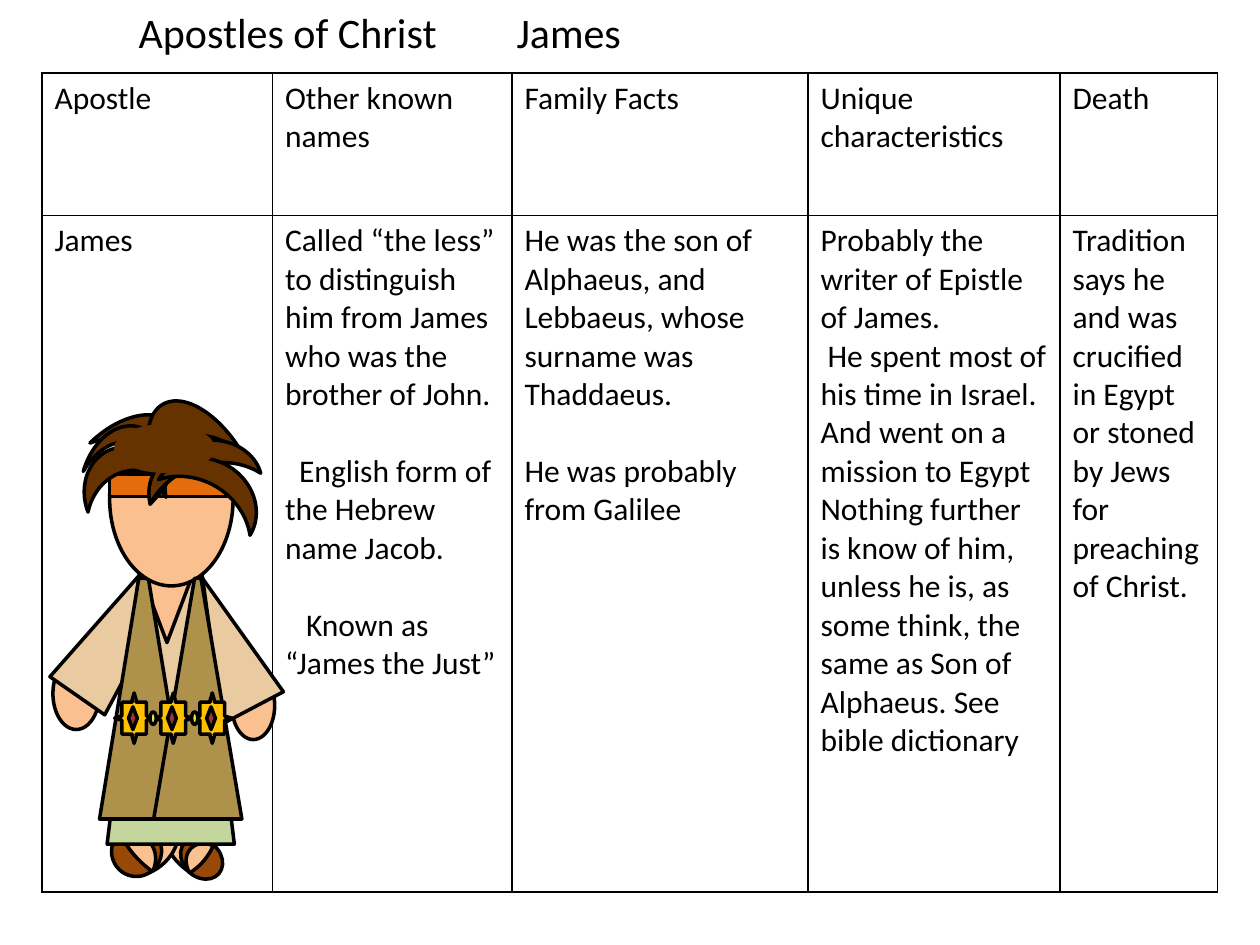
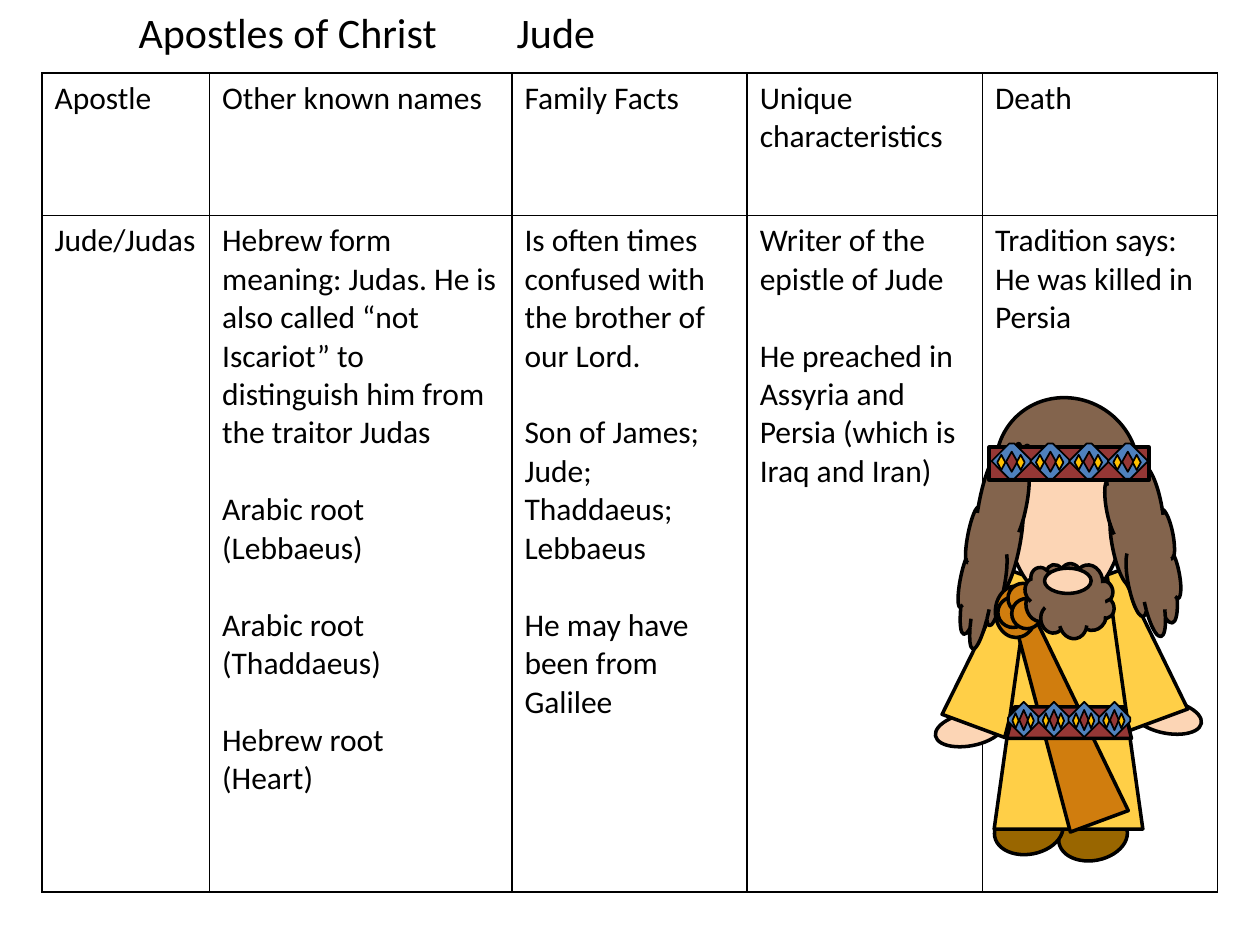
import collections
import dataclasses

import lxml.etree
import pptx
import pptx.dml.color
import pptx.enum.shapes
import pptx.enum.text
import pptx.oxml.ns
import pptx.util

MSO = pptx.enum.shapes.MSO_SHAPE
Para = collections.namedtuple("Para", "text gap indent", defaults=(0, 0))


@dataclasses.dataclass(frozen=True)
class Theme:
    font: str = "Calibri"
    title_size: int = 24
    body_size: int = 18
    line_height: float = 1.22
    columns: int = 100
    rows: int = 75
    ink: str = "000000"
    peach: str = "FAC090"
    pale_peach: str = "FCD5B5"
    linen: str = "EACAA0"
    olive: str = "AE924C"
    green: str = "C3D69B"
    orange: str = "E46C0A"
    dark_hair: str = "663300"
    brown_hair: str = "83644D"
    sandal: str = "984807"
    shoe: str = "996600"
    gold: str = "FFC000"
    ring: str = "EFE239"
    maroon: str = "953735"
    robe: str = "FFCF47"
    sash: str = "D07D0E"
    blue: str = "4F81BD"


T = Theme()
HEADINGS = ["Apostle", "Other known names", "Family Facts",
            "Unique characteristics", "Death"]
TABLE_BOX = (3.33, 5.8, 93.3, 65)
ROW_HEIGHTS = (11.3, 53.7)


def rgb(value):
    return pptx.dml.color.RGBColor.from_string(value)


def write(tf, paras, size=T.body_size, color=T.ink, tabs=()):
    tf.word_wrap = True
    for i, para in enumerate(paras):
        p = tf.paragraphs[0] if i == 0 else tf.add_paragraph()
        p.alignment = pptx.enum.text.PP_ALIGN.LEFT
        p.space_before = pptx.util.Pt(para.gap * size * T.line_height)
        pPr = p._p.get_or_add_pPr()
        pPr.set("marL", "0")
        pPr.set("indent", str(pptx.util.Pt(para.indent)))
        if tabs:
            stops = lxml.etree.SubElement(pPr, pptx.oxml.ns.qn("a:tabLst"))
            for inches in tabs:
                lxml.etree.SubElement(stops, pptx.oxml.ns.qn("a:tab"),
                                      pos=str(pptx.util.Inches(inches)), algn="l")
        r = p.add_run()
        r.text = para.text
        r.font.name = T.font
        r.font.size = pptx.util.Pt(size)
        r.font.bold = False
        r.font.color.rgb = rgb(color)


class Deck:
    def __init__(self):
        self.prs = pptx.Presentation()
        self.prs.slide_width = pptx.util.Inches(10)
        self.prs.slide_height = pptx.util.Inches(7.5)
        self.s = None
        self.group = None

    def x(self, columns):
        return round(self.prs.slide_width * columns / T.columns)

    def y(self, rows):
        return round(self.prs.slide_height * rows / T.rows)

    def box(self, left, top, width, height):
        return self.x(left), self.y(top), self.x(width), self.y(height)

    def slide(self, name):
        self.s = self.prs.slides.add_slide(self.prs.slide_layouts[5])
        sp = self.s.shapes.title
        sp.left, sp.top, sp.width, sp.height = self.box(10, 0, 72.5, 5)
        tf = sp.text_frame
        tf.auto_size = pptx.enum.text.MSO_AUTO_SIZE.NONE
        tf.vertical_anchor = pptx.enum.text.MSO_ANCHOR.TOP
        write(tf, [Para(f"Apostles of Christ\t\t{name}")],
              size=T.title_size, tabs=(3, 4))

    def border(self, cell):
        tcPr = cell._tc.get_or_add_tcPr()
        for i, side in enumerate(("lnL", "lnR", "lnT", "lnB")):
            ln = lxml.etree.Element(pptx.oxml.ns.qn(f"a:{side}"),
                                    w=str(pptx.util.Pt(1)))
            fill = lxml.etree.SubElement(ln, pptx.oxml.ns.qn("a:solidFill"))
            lxml.etree.SubElement(fill, pptx.oxml.ns.qn("a:srgbClr"), val=T.ink)
            tcPr.insert(i, ln)

    def table(self, widths, facts):
        rows = [[[Para(heading)] for heading in HEADINGS], facts]
        table = self.s.shapes.add_table(len(rows), len(widths),
                                        *self.box(*TABLE_BOX)).table
        table.first_row = table.horz_banding = False
        for column, width in zip(table.columns, widths):
            column.width = self.x(width)
        for row, height in zip(table.rows, ROW_HEIGHTS):
            row.height = self.y(height)
        for row, texts in zip(table.rows, rows):
            for cell, paras in zip(row.cells, texts):
                cell.fill.background()
                self.border(cell)
                write(cell.text_frame, paras)

    def figure(self):
        self.group = self.s.shapes.add_group_shape()

    def shape(self, kind, box, fill, rot=0, flip=False, adj=(), line=T.ink, weight=2):
        sp = self.group.shapes.add_shape(kind, *self.box(*box))
        sp.shadow.inherit = False
        sp.fill.solid()
        sp.fill.fore_color.rgb = rgb(fill)
        sp.line.color.rgb = rgb(line)
        sp.line.width = pptx.util.Pt(weight)
        sp.rotation = rot
        for i, value in enumerate(adj):
            sp.adjustments[i] = value
        if flip:
            sp._element.spPr.xfrm.set("flipH", "1")

    def bead_row(self, left, top, pitch, width, count=4):
        for i in range(count):
            x = left + i * pitch
            self.shape(MSO.OCTAGON, (x, top, width, 2.8), T.blue, adj=(0.5,), weight=1)
            self.shape(MSO.DIAMOND, (x + 0.36 * width, top + 0.65, 0.28 * width, 1.6),
                       T.maroon, weight=1)
            for share in (0.14, 0.62):
                self.shape(MSO.DIAMOND, (x + share * width, top + 0.9, 0.2 * width, 1.2),
                           T.gold, weight=1)


def draw_james(deck):
    deck.figure()
    add = deck.shape
    add(MSO.OVAL, (13.8, 64.8, 3, 5.4), T.peach, rot=314.1, flip=True)
    add(MSO.MOON, (15.8, 67.3, 1.8, 2.9), T.sandal, rot=40.3, flip=True, adj=(0.875,))
    add(MSO.MOON, (14.4, 66.1, 1.9, 2.9), T.sandal, rot=224.1, flip=True, adj=(0.344,))
    add(MSO.OVAL, (9.5, 64, 4.2, 5.9), T.peach, rot=45.9)
    add(MSO.MOON, (9.1, 66.3, 1.9, 3.9), T.sandal, rot=319.7, adj=(0.875,))
    add(MSO.MOON, (10.5, 65, 2.1, 3.9), T.sandal, rot=135.9, adj=(0.344,))

    add(MSO.OVAL, (18.4, 53.3, 3.4, 5.4), T.peach)
    add(MSO.OVAL, (4.2, 52.2, 3.7, 5.7), T.peach)
    add(MSO.TRAPEZOID, (12.8, 40.8, 6.2, 16.5), T.linen, rot=332.2, adj=(0.36,))
    add(MSO.TRAPEZOID, (8.2, 40.2, 5.3, 16.5), T.linen, rot=34.8, adj=(0.36,))
    add(MSO.TRAPEZOID, (8.5, 59, 10.1, 8), T.green, adj=(0.122,))
    add(MSO.TRAPEZOID, (9, 43.8, 9.1, 16.9), T.linen, adj=(0.253,))
    add(MSO.ISOSCELES_TRIANGLE, (11.2, 45.6, 4.1, 5.4), T.peach, rot=180)
    add(MSO.TRAPEZOID, (7.9, 45.9, 7, 19.1), T.olive, adj=(0.446,))

    add(MSO.OVAL, (8.7, 32.7, 9.8, 13.8), T.peach)
    add(MSO.RECTANGLE, (8.7, 37.6, 10.3, 1.8), T.orange)
    for box, rot, bulge in [
        ((7.5, 34.1, 4, 6.9), 69.2, 0.5),
        ((8.7, 32.2, 5.7, 6.8), 135.6, 0.5),
        ((11.3, 31.4, 6.5, 7), 59.7, 0.5),
        ((8.1, 32.8, 4.6, 6.6), 105.7, 0.285),
        ((13.9, 32.4, 3.8, 9.1), 74.4, 0.5),
        ((15.3, 34.4, 3.8, 8.5), 121.3, 0.5),
    ]:
        add(MSO.MOON, box, T.dark_hair, rot=rot, adj=(bulge,))
    add(MSO.OVAL, (9.2, 33.8, 7.7, 3.6), T.dark_hair, line=T.dark_hair)

    add(MSO.TRAPEZOID, (12.2, 45.9, 7, 19.1), T.olive, adj=(0.464,))
    for i in range(3):
        x = 9.1 + 3.1 * i
        add(MSO.QUAD_ARROW_CALLOUT, (x, 55, 3.1, 4), T.gold,
            adj=(0.185, 0.054, 0.185, 0.829))
        add(MSO.DIAMOND, (x + 1.1, 56.1, 0.7, 1.8), T.maroon)
    for x in (11.9, 15.2):
        add(MSO.OVAL, (x, 56.5, 0.5, 1), T.ring)


def draw_jude(deck):
    deck.figure()
    add = deck.shape
    for box in [(84, 64.5, 5.5, 3.8), (78.9, 64, 5.5, 3.8)]:
        add(MSO.OVAL, box, T.shoe, rot=349.2)
    add(MSO.OVAL, (74.2, 56.6, 5.5, 2.6), T.pale_peach, rot=349.2)
    add(MSO.OVAL, (89.9, 55.6, 5.5, 2.6), T.pale_peach, rot=10.8, flip=True)
    add(MSO.TRAPEZOID, (76.8, 45.4, 5.3, 12.6), T.robe, rot=20.3, flip=True)
    add(MSO.TRAPEZOID, (87.4, 45.3, 4.9, 12.2), T.robe, rot=339.7)
    add(MSO.TRAPEZOID, (78.9, 44.8, 11.8, 21), T.robe)

    add(MSO.OVAL, (82.4, 44.3, 4.5, 5.5), T.pale_peach)
    add(MSO.OVAL, (79.8, 32.5, 9.5, 15.4), T.pale_peach)
    add(MSO.CHORD, (79.2, 31.4, 11, 11.5), T.brown_hair, rot=127, adj=(27, 143.05))
    add(MSO.CLOUD, (76.7, 34.9, 4.2, 16.7), T.brown_hair, rot=11.2)
    add(MSO.CLOUD, (88.3, 35.8, 4.9, 14.8), T.brown_hair, rot=348.8, flip=True)
    add(MSO.RECTANGLE, (78.5, 35.5, 12.7, 2.6), T.maroon)

    add(MSO.TRAPEZOID, (81.4, 46.2, 4.9, 19.6), T.sash, rot=339.7, adj=(0.384,))
    add(MSO.TRAPEZOID, (79.9, 56.1, 9.9, 2.5), T.maroon)
    add(MSO.OVAL, (79, 46.5, 3.3, 4.1), T.sash)
    for x, y in [(79.2, 47.4), (80, 46.3), (80.3, 47.5)]:
        add(MSO.OVAL, (x, y, 2.4, 2.4), T.sash)
    deck.bead_row(80, 55.7, pitch=2.4, width=2.5)
    deck.bead_row(78.7, 35.2, pitch=3.07, width=3.2)

    add(MSO.CLOUD, (81.4, 44.6, 7, 6.1), T.brown_hair, rot=348.8, flip=True)
    add(MSO.OVAL, (82.9, 45.1, 3.7, 2), T.pale_peach)


def main():
    deck = Deck()

    deck.slide("James")
    deck.table((18.3, 19, 23.5, 20, 12.5), [
        [Para("James")],
        [Para("Called “the less” to distinguish him from James who was the "
              "brother of John."),
         Para("English form of the Hebrew name Jacob.", gap=1, indent=8),
         Para("Known as “James the Just”", gap=1, indent=12)],
        [Para("He was the son of Alphaeus, and Lebbaeus, whose surname was "
              "Thaddaeus."),
         Para("He was probably from Galilee", gap=1)],
        [Para("Probably the writer of Epistle of James."),
         Para("He spent most of his time in Israel. And went on a mission to "
              "Egypt", indent=4),
         Para("Nothing further is know of him, unless he is, as some think, the "
              "same as Son of Alphaeus. See bible dictionary")],
        [Para("Tradition says he and was crucified in Egypt or stoned by Jews "
              "for preaching of Christ.")],
    ])
    draw_james(deck)

    deck.slide("Jude")
    deck.table((13.3, 24, 18.67, 18.67, 18.67), [
        [Para("Jude/Judas")],
        [Para("Hebrew form meaning: Judas. He is also called “not Iscariot” to "
              "distinguish him from the traitor Judas"),
         Para("Arabic root (Lebbaeus)", gap=1),
         Para("Arabic root", gap=1),
         Para("(Thaddaeus)"),
         Para("Hebrew root", gap=1),
         Para("(Heart)")],
        [Para("Is often times confused with the brother of our Lord."),
         Para("Son of James; Jude; Thaddaeus; Lebbaeus", gap=1),
         Para("He may have been from Galilee", gap=1)],
        [Para("Writer of the epistle of Jude"),
         Para("He preached in Assyria and Persia (which is Iraq and Iran)", gap=1)],
        [Para("Tradition says:"),
         Para("He was killed in Persia")],
    ])
    draw_jude(deck)

    deck.prs.save("out.pptx")


if __name__ == "__main__":
    main()
